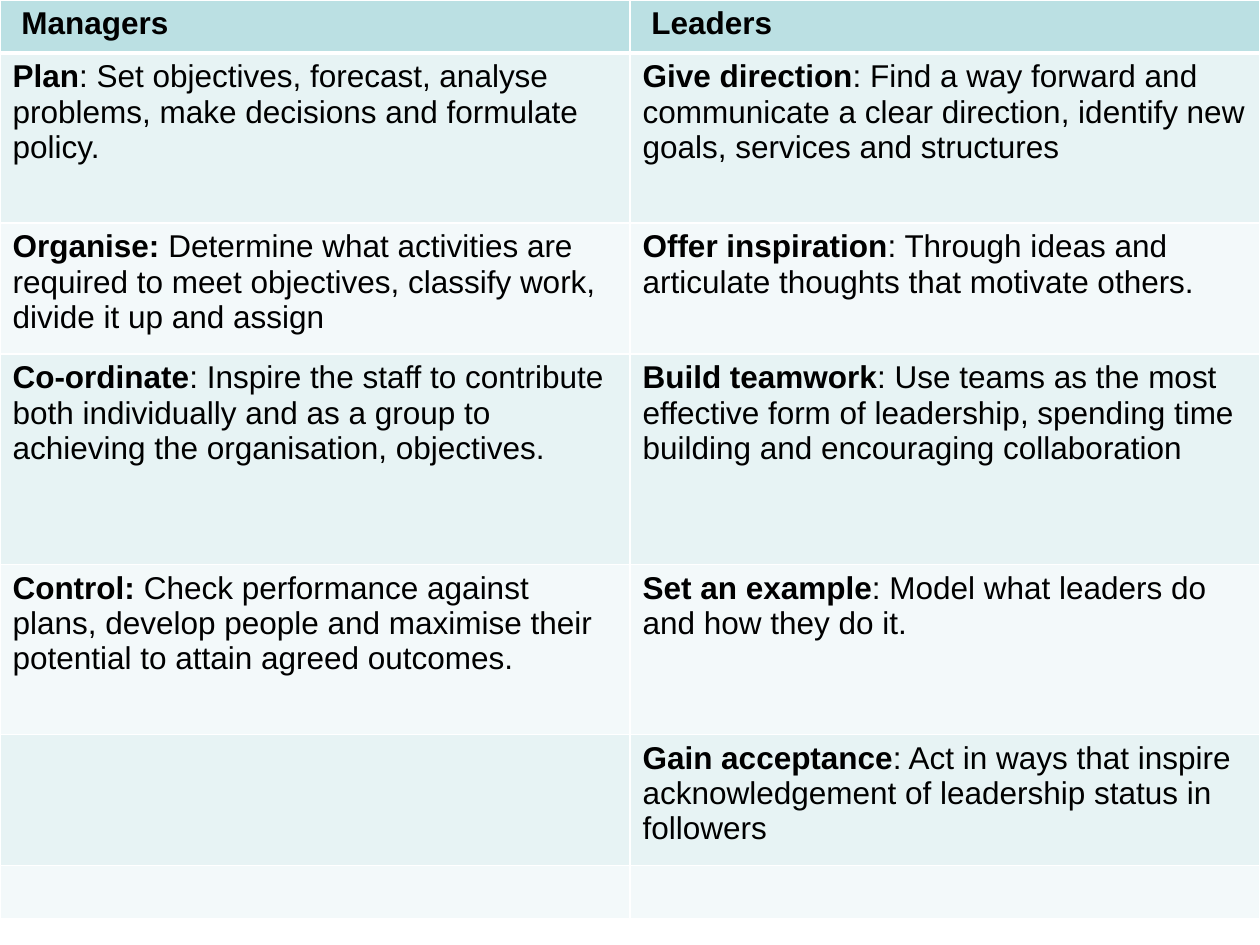
from lxml.etree import SubElement
from pptx import Presentation
from pptx.dml.color import RGBColor
from pptx.oxml.ns import qn
from pptx.util import Inches, Pt

HEADERS = ["Managers", "Leaders"]
ROW_HEIGHTS = [0.42, 1.35, 1.04, 1.67, 1.35, 1.04, 0.42]
BANDS = ["E7F3F4", "F3F9FA"]
ROLES = [
    [("Plan", ": Set objectives, forecast, analyse problems, make decisions and formulate policy."),
     ("Give direction", ": Find a way forward and communicate a clear direction, "
      "identify new goals, services and structures")],
    [("Organise:", " Determine what activities are required to meet objectives, "
      "classify work, divide it up and assign"),
     ("Offer inspiration", ": Through ideas and articulate thoughts that motivate others.")],
    [("Co-ordinate", ": Inspire the staff to contribute both individually and as a group "
      "to achieving the organisation, objectives."),
     ("Build teamwork", ": Use teams as the most effective form of leadership, "
      "spending time building and encouraging collaboration")],
    [("Control:", " Check performance against plans, develop people and maximise "
      "their potential to attain agreed outcomes."),
     ("Set an example", ": Model what leaders do and how they do it.")],
    [None,
     ("Gain acceptance", ": Act in ways that inspire acknowledgement of leadership status in followers")],
    [None, None],
]


def rgb(value):
    return RGBColor.from_string(value)


def set_borders(cell, top=1, bottom=1):
    tcPr = cell._tc.get_or_add_tcPr()
    for side, width in (("L", 1), ("R", 1), ("T", top), ("B", bottom)):
        ln = SubElement(tcPr, qn(f"a:ln{side}"), w=str(Pt(width)))
        fill = SubElement(ln, qn("a:solidFill"))
        SubElement(fill, qn("a:srgbClr"), val="FFFFFF")


def set_fill(cell, color):
    cell.fill.solid()
    cell.fill.fore_color.rgb = rgb(color)


def add_run(p, text, bold):
    r = p.add_run()
    r.text = text
    r.font.name = "Arial"
    r.font.size = Pt(18)
    r.font.bold = bold
    r.font.color.rgb = rgb("000000")


def fill_header(cell, title):
    set_borders(cell, bottom=3)
    set_fill(cell, "BBE0E3")
    cell.margin_left = Inches(0.17)
    add_run(cell.text_frame.paragraphs[0], title, True)


def fill_role(cell, role, row):
    set_borders(cell, top=3 if row == 0 else 1)
    set_fill(cell, BANDS[row % 2])
    p = cell.text_frame.paragraphs[0]
    p.font.size = Pt(18)
    if role:
        term, detail = role
        add_run(p, term, True)
        add_run(p, detail, False)


def add_comparison(s):
    table = s.shapes.add_table(len(ROW_HEIGHTS), len(HEADERS), 0, 0,
                               Inches(10), Inches(sum(ROW_HEIGHTS))).table
    for row, height in zip(table.rows, ROW_HEIGHTS):
        row.height = Inches(height)
    for col, title in enumerate(HEADERS):
        table.columns[col].width = Inches(5)
        fill_header(table.cell(0, col), title)
    for row, roles in enumerate(ROLES):
        for col, role in enumerate(roles):
            fill_role(table.cell(row + 1, col), role, row)


def main():
    prs = Presentation()
    prs.slide_width = Inches(10)
    prs.slide_height = Inches(7.5)
    s = prs.slides.add_slide(prs.slide_layouts[6])
    add_comparison(s)
    prs.save("out.pptx")


if __name__ == "__main__":
    main()
